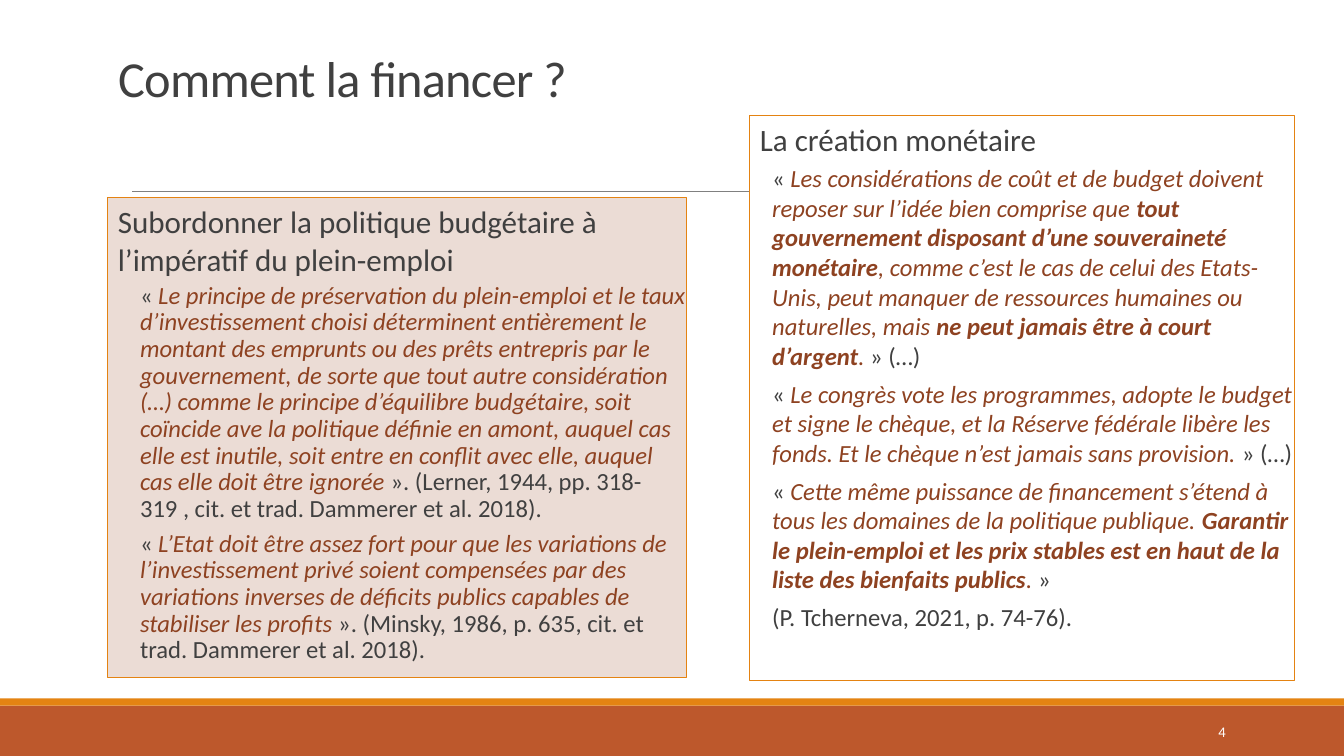
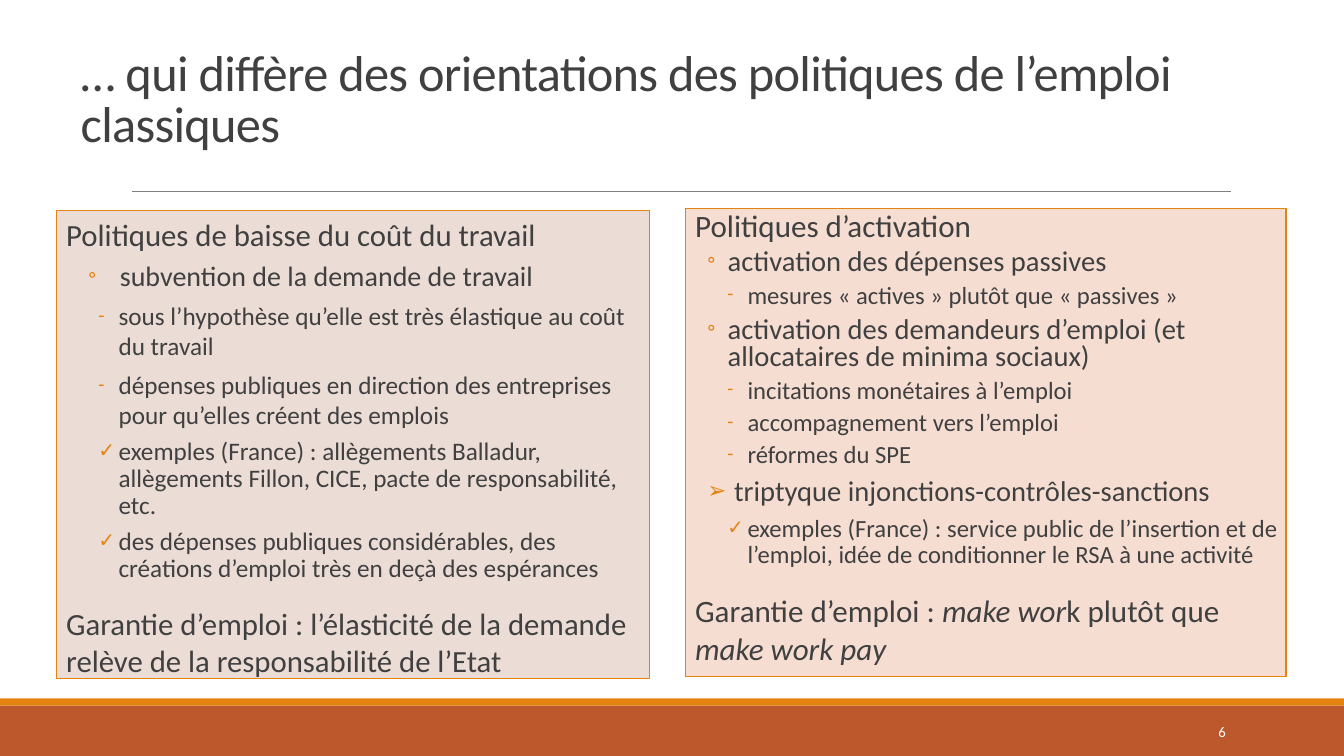
"""Build two slides on financing a job guarantee and on classic employment policies."""
import pptx
import pptx.dml.color
import pptx.enum.shapes
import pptx.enum.text
import pptx.oxml
import pptx.oxml.ns
import pptx.util
from pptx.util import Cm

FONT = "Calibri"
COLORS = {
    "text": "404040", "quote": "8E4221", "band": "BD582C", "accent": "E48312",
    "rule": "808080", "white": "FFFFFF", "sand": "EBDCD5", "peach": "F5DDD2",
}
RUN_STYLES = {
    "plain": {},
    "italic": {"italic": True},
    "quote": {"italic": True, "color": "quote"},
    "strong": {"italic": True, "bold": True, "color": "quote"},
}
# kind: size role, left margin and first-line indent in cm, bullet, space before and after
KINDS = {
    "head": ("head", 0.25, 0, None, 12, 2),
    "citation": ("detail", 0.81, 0, None, 2, 4),
    "excerpt": ("detail", 0.56, 0, None, 2, 4),
    "wide item": ("item", 1.6, -0.79, "◦", 2, 4),
    "item": ("item", 1.07, -0.51, "◦", 2, 4),
    "result": ("item", 1.07, -0.51, "➢", 2, 4),
    "dash": ("detail", 1.57, -0.51, "-", 2, 4),
    "check": ("detail", 1.57, -0.51, "✓", 2, 4),
}
SIZES = {"head": 22.2, "item": 20.4, "detail": 17.6}
ROUND_SIZES = {"head": 22, "item": 20, "detail": 18}

SLIDES = [
    {
        "title": "Comment la financer ?",
        "title_box": (2.72, 0.86, 13.89, 1.98),
        "number": "4",
        "panels": [
            {"box": (2.72, 4.98, 14.58, 12.09), "fill": "sand", "sizes": SIZES, "paragraphs": [
                ("head", 1, "Subordonner la politique budgétaire à l’impératif du plein-emploi"),
                ("citation", 0.9, [
                    ("plain", "«"),
                    ("quote", " Le principe de préservation du plein-emploi et le taux "
                     "d’investissement choisi déterminent entièrement le montant des emprunts ou "
                     "des prêts entrepris par le gouvernement, de sorte que tout autre "
                     "considération (…) comme le principe d’équilibre budgétaire, soit coïncide "
                     "ave la politique définie en amont, auquel cas elle est inutile, soit entre "
                     "en conflit avec elle, auquel cas elle doit être ignorée "),
                    ("plain", "». (Lerner, 1944, pp. 318-319 , cit. et trad. Dammerer et al. 2018)."),
                ]),
                ("citation", 0.9, [
                    ("plain", "« "),
                    ("quote", "L’Etat doit être assez fort pour que les variations de "
                     "l’investissement privé soient compensées par des variations inverses de "
                     "déficits publics capables de stabiliser les profits "),
                    ("plain", "». (Minsky, 1986, p. 635, cit. et trad. Dammerer et al. 2018)."),
                ]),
            ]},
            {"box": (18.9, 2.9, 13.72, 14.25), "fill": "white", "sizes": SIZES, "paragraphs": [
                ("head", 1, "La création monétaire"),
                ("excerpt", 1, [
                    ("plain", "« "),
                    ("quote", "Les considérations de coût et de budget doivent reposer sur l’idée "
                     "bien comprise que "),
                    ("strong", "tout gouvernement disposant d’une souveraineté monétaire"),
                    ("quote", ", comme c’est le cas de celui des Etats-Unis, peut manquer de "
                     "ressources humaines ou naturelles, mais "),
                    ("strong", "ne peut jamais être à court d’argent"),
                    ("quote", ". "),
                    ("plain", "» (…)"),
                ]),
                ("excerpt", 1, [
                    ("plain", "« "),
                    ("quote", "Le congrès vote les programmes, adopte le budget et signe le "
                     "chèque, et la Réserve fédérale libère les fonds. Et le chèque n’est jamais "
                     "sans provision. "),
                    ("plain", "» (…)"),
                ]),
                ("excerpt", 1, [
                    ("plain", "« "),
                    ("quote", "Cette même puissance de financement s’étend à tous les domaines de "
                     "la politique publique. "),
                    ("strong", "Garantir le plein-emploi et les prix stables est en haut de la "
                     "liste des bienfaits publics"),
                    ("quote", ". "),
                    ("plain", "»"),
                ]),
                ("excerpt", 1, "(P. Tcherneva, 2021, p. 74-76)."),
            ]},
        ],
    },
    {
        "title": "… qui diffère des orientations des politiques de l’emploi classiques",
        "title_box": (1.78, 1.37, 30.96, 2.62),
        "number": "6",
        "panels": [
            {"box": (1.42, 5.31, 14.96, 11.79), "fill": "sand", "sizes": ROUND_SIZES, "paragraphs": [
                ("head", 1, "Politiques de baisse du coût du travail"),
                ("wide item", 1, "subvention de la demande de travail"),
                ("dash", 1, "sous l’hypothèse qu’elle est très élastique au coût du travail"),
                ("dash", 1, "dépenses publiques en direction des entreprises pour qu’elles "
                 "créent des emplois"),
                ("check", 0.9, "exemples (France) : allègements Balladur, allègements Fillon, "
                 "CICE, pacte de responsabilité, etc."),
                ("check", 0.9, "des dépenses publiques considérables, des créations d’emploi "
                 "très en deçà des espérances"),
                ("head", 1, "Garantie d’emploi : l’élasticité de la demande relève de la "
                 "responsabilité de l’Etat"),
            ]},
            {"box": (17.27, 5.26, 15.14, 11.79), "fill": "peach", "sizes": SIZES, "paragraphs": [
                ("head", 0.8, "Politiques d’activation"),
                ("item", 0.8, "activation des dépenses passives"),
                ("dash", 0.8, "mesures « actives » plutôt que « passives »"),
                ("item", 0.8, "activation des demandeurs d’emploi (et allocataires de minima "
                 "sociaux)"),
                ("dash", 0.8, "incitations monétaires à l’emploi"),
                ("dash", 0.8, "accompagnement vers l’emploi"),
                ("dash", 0.8, "réformes du SPE"),
                ("result", 0.9, " triptyque injonctions-contrôles-sanctions"),
                ("check", 0.9, "exemples (France) : service public de l’insertion et de "
                 "l’emploi, idée de conditionner le RSA à une activité"),
                ("head", 1, [
                    ("plain", "Garantie d’emploi : "),
                    ("italic", "make wor"),
                    ("plain", "k plutôt que "),
                    ("italic", "make work pay"),
                ]),
            ]},
        ],
    },
]


def rgb(name):
    """Return a named colour."""
    return pptx.dml.color.RGBColor.from_string(COLORS[name])


def lengths(values):
    """Turn centimetres into slide lengths."""
    return [Cm(value) for value in values]


def set_font(font, size, color):
    """Set the face, size and colour of a font."""
    font.name = FONT
    font.size = pptx.util.Pt(size)
    font.color.rgb = rgb(color)


def add_box(slide, box, fill, outline=None):
    """Add a flat rectangle."""
    rectangle = slide.shapes.add_shape(pptx.enum.shapes.MSO_SHAPE.RECTANGLE, *lengths(box))
    rectangle.shadow.inherit = False
    rectangle.fill.solid()
    rectangle.fill.fore_color.rgb = rgb(fill)
    if outline:
        rectangle.line.color.rgb = rgb(outline)
        rectangle.line.width = pptx.util.Pt(0.75)
    else:
        rectangle.line.fill.background()
    return rectangle


def add_child(parent, tag, **attributes):
    """Append a drawing element with its attributes."""
    child = pptx.oxml.parse_xml(f"<a:{tag} {pptx.oxml.ns.nsdecls('a')}/>")
    for name, value in attributes.items():
        child.set(name, str(value))
    parent.append(child)
    return child


def set_indent(paragraph, margin, indent, bullet):
    """Set the indents and the bullet of a paragraph."""
    properties = paragraph._p.get_or_add_pPr()
    properties.set("marL", str(Cm(margin)))
    properties.set("indent", str(Cm(indent)))
    if bullet:
        add_child(add_child(properties, "buClr"), "srgbClr", val=COLORS["accent"])
        add_child(properties, "buSzPct", val=80000)
        add_child(properties, "buFont", typeface=FONT)
        add_child(properties, "buChar", char=bullet)
    else:
        add_child(properties, "buNone")


def fill_paragraph(paragraph, kind, spacing, content, sizes):
    """Write and format one paragraph of a panel."""
    role, margin, indent, bullet, before, after = KINDS[kind]
    paragraph.alignment = pptx.enum.text.PP_ALIGN.LEFT
    paragraph.line_spacing = spacing
    paragraph.space_before = pptx.util.Pt(before)
    paragraph.space_after = pptx.util.Pt(after)
    set_indent(paragraph, margin, indent, bullet)
    set_font(paragraph.font, sizes[role], "text")
    for style, text in [("plain", content)] if isinstance(content, str) else content:
        run = paragraph.add_run()
        run.text = text
        look = RUN_STYLES[style]
        run.font.italic = look.get("italic")
        run.font.bold = look.get("bold")
        if "color" in look:
            run.font.color.rgb = rgb(look["color"])


def add_panel(slide, panel):
    """Add a framed panel with its paragraphs."""
    frame = add_box(slide, panel["box"], panel["fill"], "accent").text_frame
    frame.word_wrap = True
    frame.vertical_anchor = pptx.enum.text.MSO_ANCHOR.TOP
    frame.margin_left = frame.margin_right = 0
    frame.margin_top = frame.margin_bottom = Cm(0.13)
    for position, (kind, spacing, content) in enumerate(panel["paragraphs"]):
        paragraph = frame.add_paragraph() if position else frame.paragraphs[0]
        fill_paragraph(paragraph, kind, spacing, content, panel["sizes"])


def set_title(slide, text, box):
    """Place and format the slide title."""
    title = slide.shapes.title
    title.left, title.top, title.width, title.height = lengths(box)
    frame = title.text_frame
    frame.text = text
    frame.word_wrap = True
    frame.auto_size = pptx.enum.text.MSO_AUTO_SIZE.NONE
    frame.vertical_anchor = pptx.enum.text.MSO_ANCHOR.BOTTOM
    heading = frame.paragraphs[0]
    heading.alignment = pptx.enum.text.PP_ALIGN.LEFT
    heading.line_spacing = 0.85
    set_font(heading.font, 36, "text")
    heading.runs[0]._r.get_or_add_rPr().set("spc", "-50")


def add_decor(slide, number):
    """Add the footer bands, the title rule and the slide number."""
    add_box(slide, (0, 17.78, 33.87, 1.27), "band")
    add_box(slide, (0, 17.6, 33.87, 0.18), "accent")
    rule = slide.shapes.add_connector(
        pptx.enum.shapes.MSO_CONNECTOR.STRAIGHT, *lengths((3.33, 4.83, 31.01, 4.83)))
    rule.line.color.rgb = rgb("rule")
    rule.line.width = pptx.util.Pt(0.5)
    add_child(rule._element.spPr, "effectLst")
    frame = slide.shapes.add_textbox(*lengths((27.51, 17.93, 3.63, 1.02))).text_frame
    frame.text = number
    frame.word_wrap = True
    frame.vertical_anchor = pptx.enum.text.MSO_ANCHOR.MIDDLE
    frame.paragraphs[0].alignment = pptx.enum.text.PP_ALIGN.RIGHT
    set_font(frame.paragraphs[0].font, 10.5, "white")


def main():
    """Build and save the presentation."""
    deck = pptx.Presentation()
    deck.slide_width, deck.slide_height = lengths((33.87, 19.05))
    for content in SLIDES:
        slide = deck.slides.add_slide(deck.slide_layouts[5])
        add_decor(slide, content["number"])
        set_title(slide, content["title"], content["title_box"])
        for panel in content["panels"]:
            add_panel(slide, panel)
    deck.save("out.pptx")


if __name__ == "__main__":
    main()
